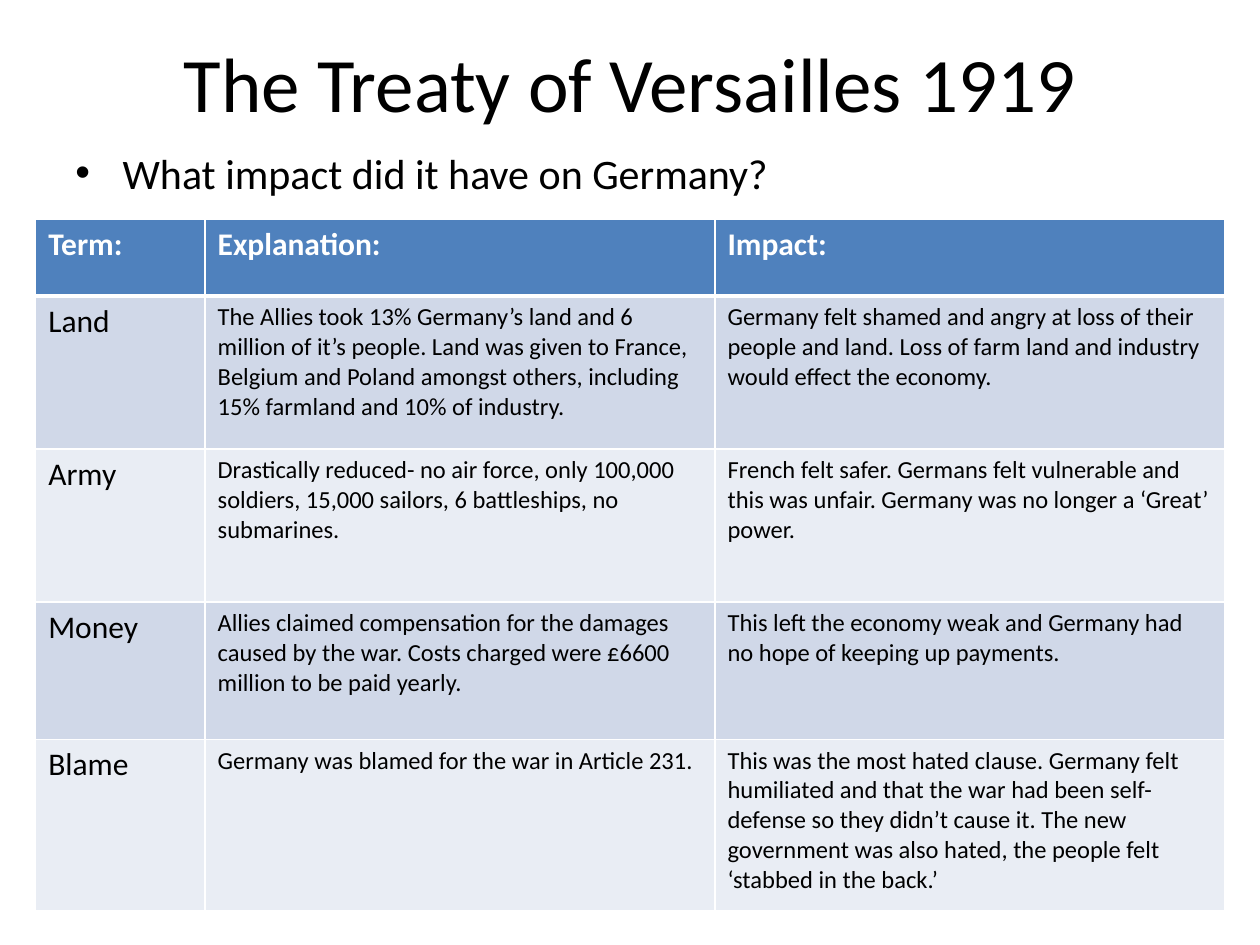
from lxml.etree import SubElement
from pptx import Presentation
from pptx.dml.color import RGBColor
from pptx.enum.text import MSO_ANCHOR, PP_ALIGN
from pptx.oxml.ns import qn
from pptx.util import Pt


def color(hex_code):
    return RGBColor.from_string(hex_code)


def style(paragraph, size, hex_code="000000", bold=False):
    for run in paragraph.runs:
        run.font.name = "Calibri"
        run.font.size = Pt(size)
        run.font.bold = bold
        run.font.color.rgb = color(hex_code)


prs = Presentation()
prs.slide_width, prs.slide_height = Pt(720), Pt(540)
slide = prs.slides.add_slide(prs.slide_layouts[6])

# Title
title = slide.shapes.add_textbox(Pt(36), Pt(12.2), Pt(648), Pt(68.4)).text_frame
title.word_wrap = True
title.vertical_anchor = MSO_ANCHOR.MIDDLE
title.text = "The Treaty of Versailles 1919"
title.paragraphs[0].alignment = PP_ALIGN.CENTER
style(title.paragraphs[0], 44)

# Bulleted question
body = slide.shapes.add_textbox(Pt(36), Pt(80.6), Pt(648), Pt(401.8)).text_frame
body.word_wrap = True
body.text = "What impact did it have on Germany?"
question = body.paragraphs[0]
question.space_before = Pt(4.8)
style(question, 24)
bullet_props = question._p.get_or_add_pPr()
bullet_props.set("marL", str(Pt(27)))
bullet_props.set("indent", str(-Pt(27)))
SubElement(bullet_props, qn("a:buFont"), typeface="Arial")
SubElement(bullet_props, qn("a:buChar"), char="•")

# Table of terms
rows = [
    ("Term:", "Explanation:", "Impact:"),
    ("Land",
     "The Allies took 13% Germany’s land and 6 million of it’s people. Land was given to France, "
     "Belgium and Poland amongst others, including 15% farmland and 10% of industry.",
     "Germany felt shamed and angry at loss of their people and land. Loss of farm land and "
     "industry would effect the economy."),
    ("Army",
     "Drastically reduced- no air force, only 100,000 soldiers, 15,000 sailors, 6 battleships, "
     "no submarines.",
     "French felt safer. Germans felt vulnerable and this was unfair. Germany was no longer a "
     "‘Great’ power."),
    ("Money",
     "Allies claimed compensation for the damages caused by the war. Costs charged were £6600 "
     "million to be paid yearly.",
     "This left the economy weak and Germany had no hope of keeping up payments."),
    ("Blame",
     "Germany was blamed for the war in Article 231.",
     "This was the most hated clause. Germany felt humiliated and that the war had been "
     "self-defense so they didn’t cause it. The new government was also hated, the people felt "
     "‘stabbed in the back.’"),
]
col_widths = [96.8, 291.4, 291.4]
row_heights = [43.9, 87.4, 87.4, 78.6, 97.9]

terms = slide.shapes.add_table(len(rows), len(col_widths), Pt(20.4), Pt(125.3),
                               Pt(sum(col_widths)), Pt(sum(row_heights))).table
for column, width in zip(terms.columns, col_widths):
    column.width = Pt(width)

for r, (texts, height) in enumerate(zip(rows, row_heights)):
    terms.rows[r].height = Pt(height)
    header = r == 0
    row_fill = "4F81BD" if header else ("E9EDF4", "D0D8E8")[r % 2]
    for c, text in enumerate(texts):
        cell = terms.cell(r, c)
        cell.text = text
        style(cell.text_frame.paragraphs[0], 18 if header or c == 0 else 14,
              "FFFFFF" if header else "000000", header)
        cell_props = cell._tc.get_or_add_tcPr()
        for side in ("L", "R", "T", "B"):
            thick = (header and side == "B") or (r == 1 and side == "T")
            border = SubElement(cell_props, qn(f"a:ln{side}"), w=str(Pt(3 if thick else 1)))
            SubElement(SubElement(border, qn("a:solidFill")), qn("a:srgbClr"), val="FFFFFF")
        cell.fill.solid()
        cell.fill.fore_color.rgb = color(row_fill)

prs.save("out.pptx")
